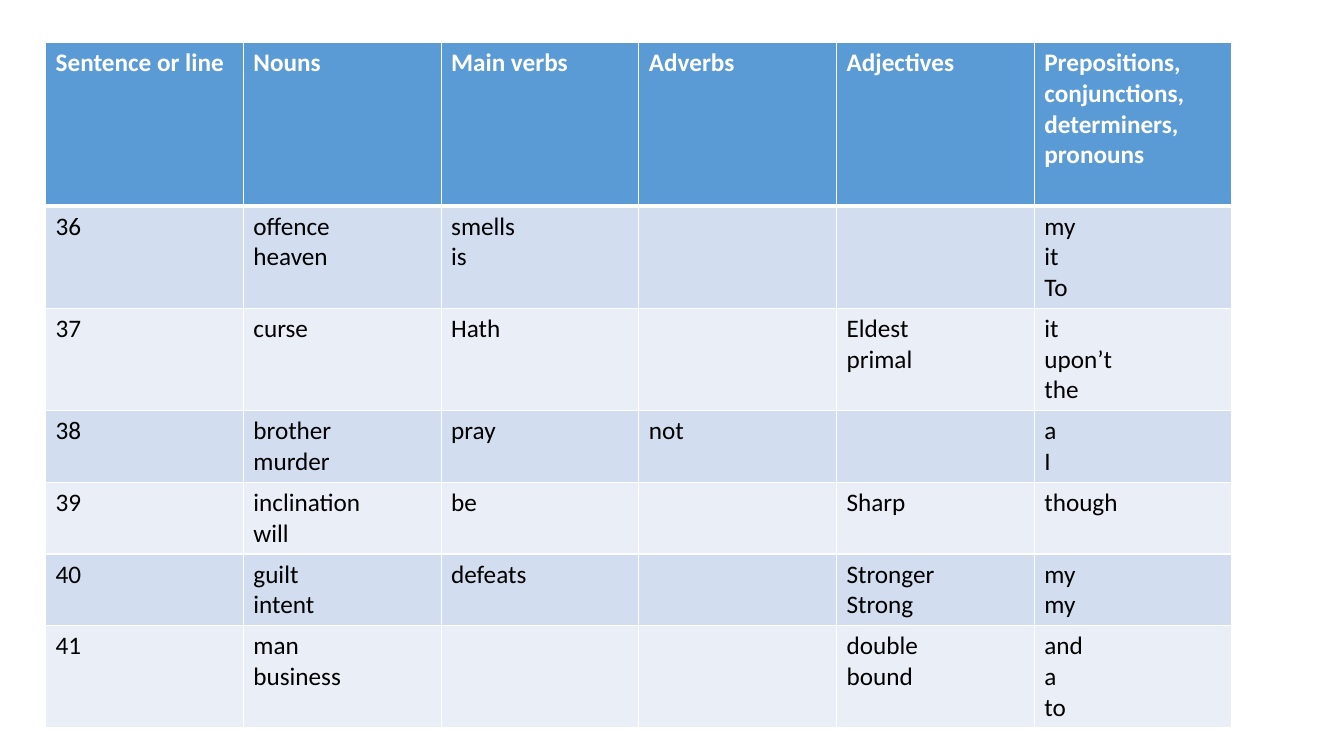
from dataclasses import dataclass

from lxml.etree import SubElement
from pptx import Presentation
from pptx.dml.color import RGBColor
from pptx.oxml.ns import qn
from pptx.util import Cm, Pt


@dataclass(frozen=True)
class Theme:
    """Colours, type and line widths of the slide."""

    font: str = "Calibri"
    size: int = 18
    header_fill: str = "5B9BD5"
    band_fills: tuple = ("D2DEEF", "EAEFF7")
    header_text: str = "FFFFFF"
    body_text: str = "000000"
    border: str = "FFFFFF"
    thin: int = 1
    thick: int = 3


THEME = Theme()

HEADINGS = (
    "Sentence or line",
    "Nouns",
    "Main verbs",
    "Adverbs",
    "Adjectives",
    "Prepositions, conjunctions, determiners, pronouns",
)
WORD_ROWS = (
    ("36", "offence\nheaven", "smells\nis", "", "", "my\nit\nTo"),
    ("37", "curse", "Hath", "", "Eldest\nprimal", "it\nupon’t\nthe"),
    ("38", "brother\nmurder", "pray", "not", "", "a\nI"),
    ("39", "inclination\nwill", "be", "", "Sharp", "though"),
    ("40", "guilt\nintent", "defeats", "", "Stronger\nStrong", "my\nmy"),
    ("41", "man\nbusiness", "", "", "double\nbound", "and\na\nto"),
)


def set_borders(cell, top, bottom):
    """Draw the four cell borders, with top and bottom widths in points."""
    properties = cell._tc.get_or_add_tcPr()
    widths = {"lnL": THEME.thin, "lnR": THEME.thin, "lnT": top, "lnB": bottom}
    for side, width in widths.items():
        line = SubElement(properties, qn(f"a:{side}"), w=str(Pt(width)))
        fill = SubElement(line, qn("a:solidFill"))
        SubElement(fill, qn("a:srgbClr"), val=THEME.border)


def fill_cell(cell, text, fill, color, bold):
    """Write the text of a cell and set its fill and type."""
    cell.fill.solid()
    cell.fill.fore_color.rgb = RGBColor.from_string(fill)
    cell.text_frame.text = text
    for paragraph in cell.text_frame.paragraphs:
        for run in paragraph.runs:
            run.font.name = THEME.font
            run.font.size = Pt(THEME.size)
            run.font.bold = bold
            run.font.color.rgb = RGBColor.from_string(color)


def add_word_table(slide):
    """Add the table of word classes by line."""
    rows = (HEADINGS, *WORD_ROWS)
    frame = slide.shapes.add_table(
        len(rows), len(HEADINGS), Cm(1.15), Cm(1.07), Cm(29.9), Cm(17.07)
    )
    table = frame.table
    for row_index, texts in enumerate(rows):
        is_header = row_index == 0
        table.rows[row_index].height = Cm(4.12) if is_header else Cm(1.6)
        fill = THEME.header_fill if is_header else THEME.band_fills[(row_index - 1) % 2]
        color = THEME.header_text if is_header else THEME.body_text
        top = THEME.thick if row_index == 1 else THEME.thin
        bottom = THEME.thick if is_header else THEME.thin
        for column_index, text in enumerate(texts):
            cell = table.cell(row_index, column_index)
            set_borders(cell, top, bottom)
            fill_cell(cell, text, fill, color, is_header)
    frame.height = Cm(17.07)


def main():
    """Build and save the presentation."""
    presentation = Presentation()
    presentation.slide_width = Cm(33.87)
    presentation.slide_height = Cm(19.05)
    slide = presentation.slides.add_slide(presentation.slide_layouts[6])
    add_word_table(slide)
    presentation.save("out.pptx")


if __name__ == "__main__":
    main()
